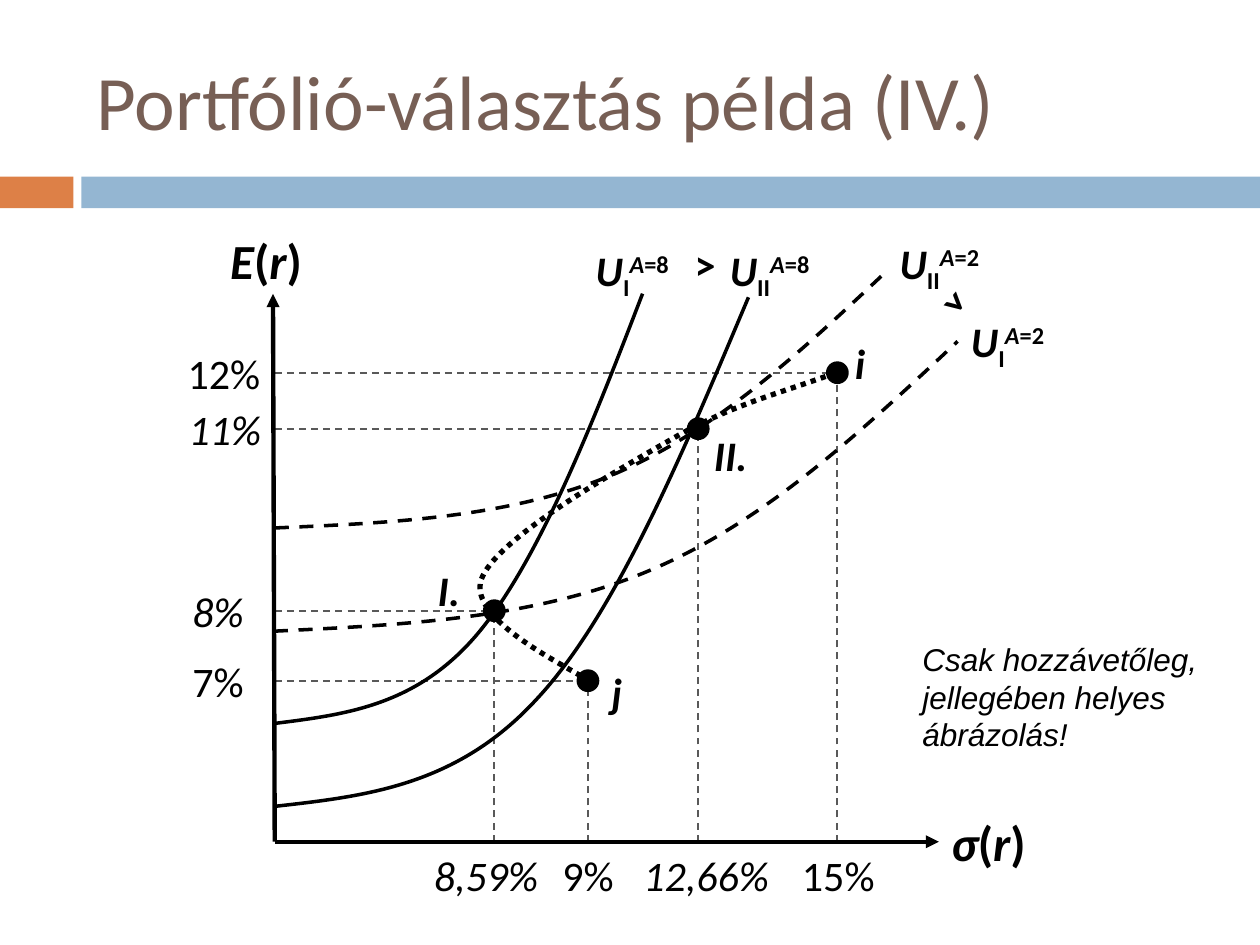
from dataclasses import dataclass

from lxml.etree import SubElement
from pptx import Presentation
from pptx.dml.color import RGBColor
from pptx.enum.dml import MSO_LINE_DASH_STYLE as Dash
from pptx.enum.shapes import MSO_CONNECTOR, MSO_SHAPE
from pptx.enum.text import MSO_ANCHOR, PP_ALIGN
from pptx.oxml.ns import qn
from pptx.util import Pt

BLACK = RGBColor(0x00, 0x00, 0x00)
GREY = RGBColor(0x59, 0x59, 0x59)
BROWN = RGBColor(0x77, 0x5F, 0x55)
ORANGE = RGBColor(0xDD, 0x80, 0x47)
BLUE = RGBColor(0x94, 0xB6, 0xD2)

AXIS_X, AXIS_Y = 157, 481
DOT_SIZE = 11.5
SUBSCRIPT, SUPERSCRIPT = -25000, 30000
TICK_HEIGHT = 36


@dataclass(frozen=True)
class Piece:
    text: str
    italic: bool = False
    baseline: int = 0


@dataclass(frozen=True)
class Label:
    pieces: tuple[Piece, ...]
    left: float
    top: float
    width: float
    height: float = TICK_HEIGHT
    size: float = 24
    bold: bool = True
    align: PP_ALIGN = PP_ALIGN.CENTER
    font: str = "Calibri"
    rotation: float = 0


@dataclass(frozen=True)
class Curve:
    """A start point followed by three points for each Bézier segment."""
    points: tuple[tuple[float, float], ...]
    width: float = 2
    dash: Dash | None = None


@dataclass(frozen=True)
class Portfolio:
    x: float
    y: float


PORTFOLIOS = (
    Portfolio(478.5, 213),
    Portfolio(336, 389),
    Portfolio(282.5, 349),
    Portfolio(399, 245),
)

FRONTIER = Curve(((477.4, 213.1), (446.4, 224.6), (418.3, 231.1), (384.5, 250.6),
                  (350.6, 270), (283, 308.2), (275, 331.2),
                  (267.1, 354.6), (324.7, 380.9), (338.4, 390.2)), 3, Dash.ROUND_DOT)
INDIFFERENCE_CURVES = (
    Curve(((157.5, 413.3), (198, 408.2), (238.3, 403.2), (272.9, 362.2),
           (307.4, 321.1), (337.7, 244.8), (367.2, 167.8))),
    Curve(((156.5, 360.7), (231.1, 357.1), (306, 353.5), (370.8, 326.2),
           (436.3, 298.8), (491.8, 247), (547.2, 195.1)), dash=Dash.DASH),
    Curve(((157, 460.8), (208.8, 455), (260.6, 449.3), (306, 400.3),
           (351.4, 352.1), (389.5, 260.6), (427.7, 169.9))),
    Curve(((157, 301.7), (223.9, 298.8), (290.9, 295.9), (349.9, 271.4),
           (408.2, 247), (457.9, 200.9), (507.6, 154.1)), dash=Dash.DASH),
)


def axis_label(symbol: str, left: float, top: float) -> Label:
    pieces = (Piece(symbol, True), Piece("("), Piece("r", True), Piece(")"))
    return Label(pieces, left, top, 67, 41, 28, align=PP_ALIGN.LEFT)


def tick_label(text: str, left: float, top: float, width: float = 57,
               italic: bool = False, align: PP_ALIGN = PP_ALIGN.CENTER) -> Label:
    return Label((Piece(text, italic),), left, top, width, bold=False, align=align)


def name_label(text: str, left: float, top: float, width: float = 28,
               italic: bool = True, rotation: float = 0) -> Label:
    return Label((Piece(text, italic),), left, top, width, rotation=rotation)


def utility_label(level: str, aversion: int, left: float, top: float) -> Label:
    pieces = (Piece("U", True), Piece(level, False, SUBSCRIPT),
              Piece("A", True, SUPERSCRIPT), Piece(f"={aversion}", False, SUPERSCRIPT))
    return Label(pieces, left, top, 78.5)


LABELS = (
    axis_label("E", 124.5, 128),
    axis_label("σ", 536.5, 461),
    tick_label("12%", 99.5, 195),
    tick_label("11%", 100, 227, italic=True),
    tick_label("8%", 96, 331, italic=True),
    tick_label("7%", 96, 371),
    tick_label("8,59%", 238.5, 482, 78.5, italic=True),
    tick_label("9%", 307.5, 482),
    tick_label("12,66%", 351.5, 482, 95, italic=True, align=PP_ALIGN.RIGHT),
    tick_label("15%", 450.5, 482),
    name_label("i", 477.5, 189.5),
    name_label("j", 338.5, 377.5),
    name_label("I.", 242.5, 319),
    name_label("II.", 399, 242, 37),
    utility_label("I", 8, 322, 136),
    utility_label("II", 8, 400.5, 136),
    utility_label("II", 2, 497.5, 132),
    utility_label("I", 2, 536.5, 176.5),
    name_label(">", 389, 133, italic=False),
    name_label(">", 526.5, 154, 41, italic=False, rotation=41.8),
    Label((Piece("Csak hozzávetőleg, jellegében helyes ábrázolás!", True),),
          520, 362, 186.5, 73, 18, False, PP_ALIGN.LEFT, "Arial"),
)


def add_filled(slide, kind: MSO_SHAPE, left: float, top: float, width: float,
               height: float, color: RGBColor):
    shape = slide.shapes.add_shape(kind, Pt(left), Pt(top), Pt(width), Pt(height))
    shape.shadow.inherit = False
    shape.fill.solid()
    shape.fill.fore_color.rgb = color
    shape.line.fill.background()
    return shape


def add_line(slide, start: tuple[float, float], end: tuple[float, float],
             color: RGBColor, width: float, dash: Dash | None = None,
             arrow: bool = False) -> None:
    line = slide.shapes.add_connector(
        MSO_CONNECTOR.STRAIGHT, *(Pt(value) for value in (*start, *end)))
    line.line.color.rgb = color
    line.line.width = Pt(width)
    line.line.dash_style = dash
    if arrow:
        SubElement(line.line._get_or_add_ln(), qn("a:tailEnd"), type="triangle")
    SubElement(line._element.spPr, qn("a:effectLst"))


def add_curve(slide, curve: Curve) -> None:
    """Draw the control polygon, then turn each three points into a Bézier segment."""
    points = [(Pt(x), Pt(y)) for x, y in curve.points]
    builder = slide.shapes.build_freeform(*points[0])
    builder.add_line_segments(points[1:], close=False)
    shape = builder.convert_to_shape()
    shape.shadow.inherit = False
    shape.fill.background()
    shape.line.color.rgb = BLACK
    shape.line.width = Pt(curve.width)
    shape.line.dash_style = curve.dash
    outline = shape._element.find(".//" + qn("a:path"))
    corners = outline.findall(qn("a:lnTo"))
    for first in range(0, len(corners), 3):
        segment = SubElement(outline, qn("a:cubicBezTo"))
        for corner in corners[first:first + 3]:
            segment.append(corner[0])
            outline.remove(corner)


def add_label(slide, label: Label) -> None:
    box = slide.shapes.add_textbox(
        Pt(label.left), Pt(label.top), Pt(label.width), Pt(label.height))
    box.rotation = label.rotation
    box.text_frame.word_wrap = True
    paragraph = box.text_frame.paragraphs[0]
    paragraph.alignment = label.align
    for piece in label.pieces:
        run = paragraph.add_run()
        run.text = piece.text
        run.font.name = label.font
        run.font.size = Pt(label.size)
        run.font.bold = label.bold
        run.font.italic = piece.italic
        run.font.color.rgb = BLACK
        if piece.baseline:
            run._r.get_or_add_rPr().set("baseline", str(piece.baseline))


def add_title(slide, text: str) -> None:
    title = slide.shapes.title
    title.left, title.top, title.width, title.height = Pt(48), Pt(18), Pt(642), Pt(78)
    title.text_frame.vertical_anchor = MSO_ANCHOR.MIDDLE
    paragraph = title.text_frame.paragraphs[0]
    paragraph.alignment = PP_ALIGN.LEFT
    run = paragraph.add_run()
    run.text = text
    run.font.name = "Calibri"
    run.font.size = Pt(44)
    run.font.color.rgb = BROWN


def main() -> None:
    presentation = Presentation()
    presentation.slide_width, presentation.slide_height = Pt(720), Pt(540)
    slide = presentation.slides.add_slide(presentation.slide_layouts[5])
    add_title(slide, "Portfólió-választás példa (IV.)")
    add_filled(slide, MSO_SHAPE.RECTANGLE, 0, 101, 42, 18, ORANGE)
    add_filled(slide, MSO_SHAPE.RECTANGLE, 46.5, 101, 673.5, 18, BLUE)
    add_curve(slide, FRONTIER)
    for point in PORTFOLIOS:
        for foot in ((AXIS_X, point.y), (point.x, AXIS_Y)):
            add_line(slide, foot, (point.x, point.y), GREY, 1, Dash.DASH)
    for curve in INDIFFERENCE_CURVES:
        add_curve(slide, curve)
    for tip in ((156, 168), (536.5, AXIS_Y)):
        add_line(slide, (AXIS_X, AXIS_Y), tip, BLACK, 2.5, arrow=True)
    for point in PORTFOLIOS:
        dot = add_filled(slide, MSO_SHAPE.OVAL, point.x - DOT_SIZE / 2,
                         point.y - DOT_SIZE / 2, DOT_SIZE, DOT_SIZE, BLACK)
        dot.line.color.rgb = BLACK
        dot.line.width = Pt(1.5)
    for label in LABELS:
        add_label(slide, label)
    presentation.save("out.pptx")


if __name__ == "__main__":
    main()
